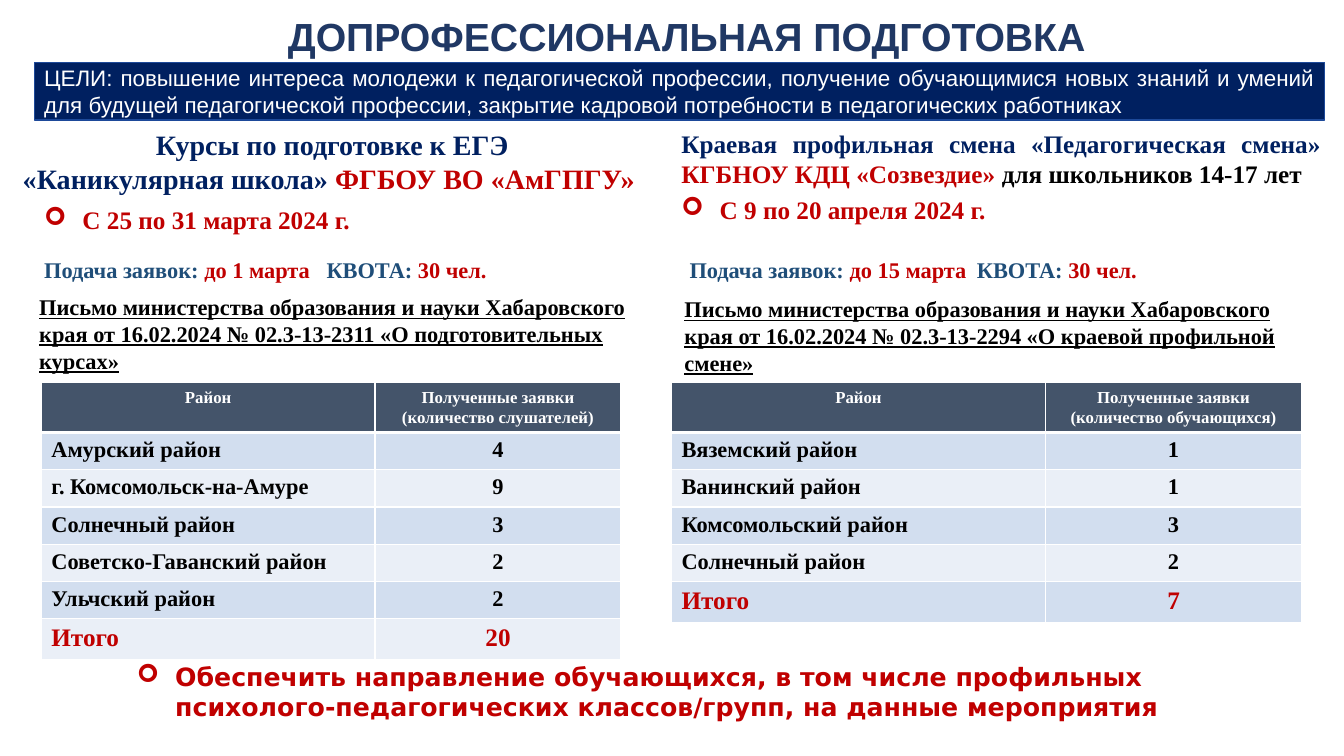
from pptx import Presentation
from pptx import util as u
from pptx.dml.color import RGBColor
from pptx.enum import shapes, text
from pptx.oxml import parse_xml
from pptx.oxml.ns import nsdecls

COLORS = {
    "title": "203864", "navy": "002060", "edge": "1D4999", "red": "C00000",
    "blue": "1F4E79", "black": "000000", "white": "FFFFFF",
    "head": "44546A", "band": "D2DEEF", "pale": "EAEFF7",
}
SERIF = "Times New Roman"
LEFT, CENTER, JUSTIFY = text.PP_ALIGN.LEFT, text.PP_ALIGN.CENTER, text.PP_ALIGN.JUSTIFY


def rgb(name):
    return RGBColor.from_string(COLORS[name])


def place(shape, box):
    shape.left, shape.top, shape.width, shape.height = map(u.Inches, box)


def style(font, size, color, name=SERIF, bold=True, underline=None):
    font.size, font.name, font.bold, font.underline = u.Pt(size), name, bold, underline
    font.color.rgb = rgb(color)


def add_runs(p, runs, size, **options):
    for content, color in runs:
        r = p.add_run()
        r.text = content
        style(r.font, size, color, **options)


def add_text(s, box, lines, size, align=LEFT, **options):
    tf = s.shapes.add_textbox(*map(u.Inches, box)).text_frame
    tf.word_wrap = True
    for i, runs in enumerate(lines):
        p = tf.add_paragraph() if i else tf.paragraphs[0]
        p.alignment = align
        add_runs(p, runs, size, **options)
    return tf


def add_bullet(s, box, content, name=SERIF):
    p = add_text(s, box, [[(content, "red")]], 18, name=name).paragraphs[0]
    pPr = p._p.get_or_add_pPr()
    pPr.set("marL", str(u.Inches(0.38)))
    pPr.set("indent", str(-u.Inches(0.38)))
    pPr.append(parse_xml(f'<a:buFont {nsdecls("a")} typeface="Wingdings"/>'))
    pPr.append(parse_xml(f'<a:buChar {nsdecls("a")} char="➢"/>'))


def add_applications(s, box, deadline, quota_tab):
    runs = [("Подача заявок: ", "blue"), (deadline, "red"),
            ("\tКВОТА:", "blue"), (" 30 чел.", "red")]
    p = add_text(s, box, [runs], 16).paragraphs[0]
    p._p.get_or_add_pPr().append(parse_xml(
        f'<a:tabLst {nsdecls("a")}><a:tab pos="{u.Inches(quota_tab)}" algn="l"/></a:tabLst>'))


def add_borders(cell, bottom):
    tcPr = cell._tc.get_or_add_tcPr()
    for side, width in (("L", 1), ("R", 1), ("T", 1), ("B", bottom)):
        tcPr.append(parse_xml(
            f'<a:ln{side} {nsdecls("a")} w="{u.Pt(width)}"><a:solidFill>'
            f'<a:srgbClr val="{COLORS["white"]}"/></a:solidFill></a:ln{side}>'))


def add_district_table(s, box, widths, rows, header_height, total_height):
    table = s.shapes.add_table(len(rows), 2, *map(u.Inches, box)).table
    last = len(rows) - 1
    for column, width in zip(table.columns, widths):
        column.width = u.Inches(width)
    for i, row in enumerate(rows):
        height = {0: header_height, last: total_height}.get(i, 0.37)
        table.rows[i].height = u.Inches(height)
        fill = "head" if i == 0 else "band" if i % 2 else "pale"
        size, color = {0: (12, "white"), last: (18, "red")}.get(i, (16, "black"))
        for j, content in enumerate(row):
            cell = table.cell(i, j)
            add_borders(cell, 1 if i else 3)
            cell.fill.solid()
            cell.fill.fore_color.rgb = rgb(fill)
            cell.text_frame.text = content
            for p in cell.text_frame.paragraphs:
                p.alignment = CENTER if j or i == 0 else LEFT
                if i == 0:
                    p.line_spacing = u.Pt(14.4)
                style(p.runs[0].font, size, color)


def add_header(s, box):
    x, y, w, h = box
    title = s.shapes.title
    place(title, (x + 0.07, y, w, 0.71))
    tf = title.text_frame
    tf.text = "ДОПРОФЕССИОНАЛЬНАЯ ПОДГОТОВКА"
    tf.auto_size = text.MSO_AUTO_SIZE.NONE
    tf.vertical_anchor = text.MSO_ANCHOR.MIDDLE
    tf.paragraphs[0].alignment = CENTER
    style(tf.paragraphs[0].runs[0].font, 28, "title", "Arial")

    goals = s.shapes.add_shape(shapes.MSO_SHAPE.RECTANGLE,
                               *map(u.Inches, (x, y + 0.62, w, h - 0.62)))
    goals.shadow.inherit = False
    goals.fill.solid()
    goals.fill.fore_color.rgb = rgb("navy")
    goals.line.color.rgb = rgb("edge")
    goals.line.width = u.Pt(1)
    tf = goals.text_frame
    tf.word_wrap = True
    tf.vertical_anchor = text.MSO_ANCHOR.MIDDLE
    p = tf.paragraphs[0]
    p.alignment = JUSTIFY
    add_runs(p, [("ЦЕЛИ: повышение интереса молодежи к педагогической профессии, "
                  "получение обучающимися новых знаний и умений для будущей "
                  "педагогической профессии, закрытие кадровой потребности "
                  "в педагогических работниках", "white")], 16, name="Arial", bold=False)


def add_letter(s, box, ending):
    content = ("Письмо министерства образования и науки Хабаровского края "
               "от 16.02.2024 № 02.3-13-" + ending)
    add_text(s, box, [[(content, "black")]], 16, underline=True)


def add_courses(s, box):
    x, y, w, h = box
    add_text(s, (x, y, w, 0.77), [
        [("Курсы по подготовке к ЕГЭ", "navy")],
        [("«Каникулярная школа» ", "navy"), ("ФГБОУ ВО «АмГПГУ» ", "red")],
    ], 20, CENTER)
    add_bullet(s, (x + 0.3, y + 0.76, 4.84, 0.4), "С 25 по 31 марта 2024 г.")
    add_applications(s, (x + 0.3, y + 1.27, 4.99, 0.37), "до 1 марта", 2.8)
    add_letter(s, (x + 0.25, y + 1.64, 6.12, 0.91), "2311 «О подготовительных курсах»")
    add_district_table(s, (x + 0.37, y + 2.57, 5.75, h - 2.57), (3.31, 2.44), [
        ("Район", "Полученные заявки (количество слушателей)"),
        ("Амурский район", "4"),
        ("г. Комсомольск-на-Амуре", "9"),
        ("Солнечный район", "3"),
        ("Советско-Гаванский район", "2"),
        ("Ульчский район", "2"),
        ("Итого", "20"),
    ], 0.49, 0.39)


def add_camp(s, box):
    x, y, w, h = box
    add_text(s, (x, y, w, 1.08), [[
        ("Краевая профильная смена «Педагогическая смена» ", "navy"),
        ("КГБНОУ КДЦ «Созвездие» ", "red"),
        ("для школьников 14-17 лет", "black"),
    ]], 18, JUSTIFY)
    add_bullet(s, (x, y + 0.66, 4.6, 0.4), "С 9 по 20 апреля 2024 г.")
    add_applications(s, (x + 0.08, y + 1.27, 5.65, 0.37), "до 15 марта", 2.85)
    add_letter(s, (x + 0.03, y + 1.66, 6.51, 0.91), "2294 «О краевой профильной смене»")
    add_district_table(s, (x, y + 2.57, 6.25, h - 2.57), (3.71, 2.54), [
        ("Район", "Полученные заявки\n(количество обучающихся)"),
        ("Вяземский район", "1"),
        ("Ванинский район", "1"),
        ("Комсомольский район", "3"),
        ("Солнечный район", "2"),
        ("Итого", "7"),
    ], 0.49, 0.41)


def main():
    prs = Presentation()
    prs.slide_width, prs.slide_height = u.Inches(13.33), u.Inches(7.5)
    s = prs.slides.add_slide(prs.slide_layouts[5])
    add_header(s, (0.34, 0, 12.8, 1.19))
    add_courses(s, (0.04, 1.22, 6.51, 5.29))
    add_camp(s, (6.66, 1.22, 6.54, 4.95))
    add_bullet(s, (1.26, 6.51, 11.1, 0.71),
               "Обеспечить направление обучающихся, в том числе профильных "
               "психолого-педагогических классов/групп, на данные мероприятия",
               "DejaVu Sans")
    prs.save("out.pptx")


if __name__ == "__main__":
    main()
